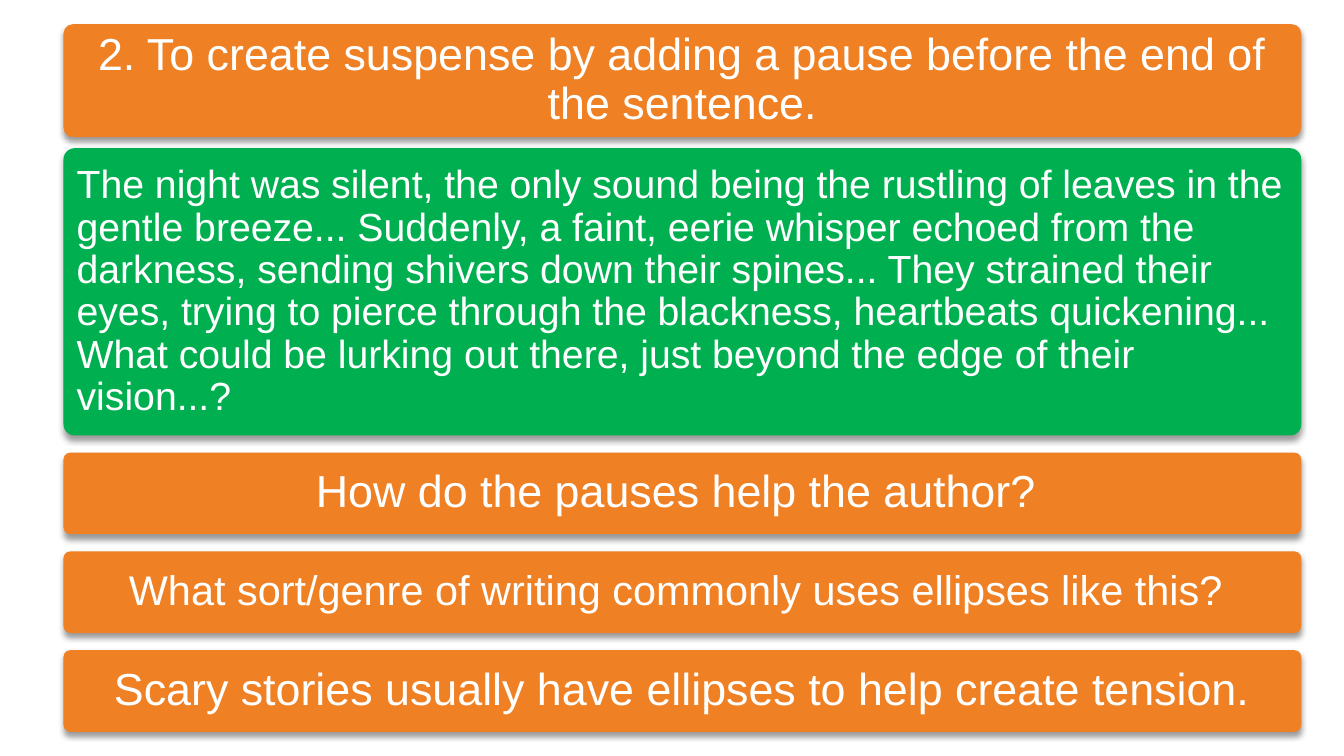
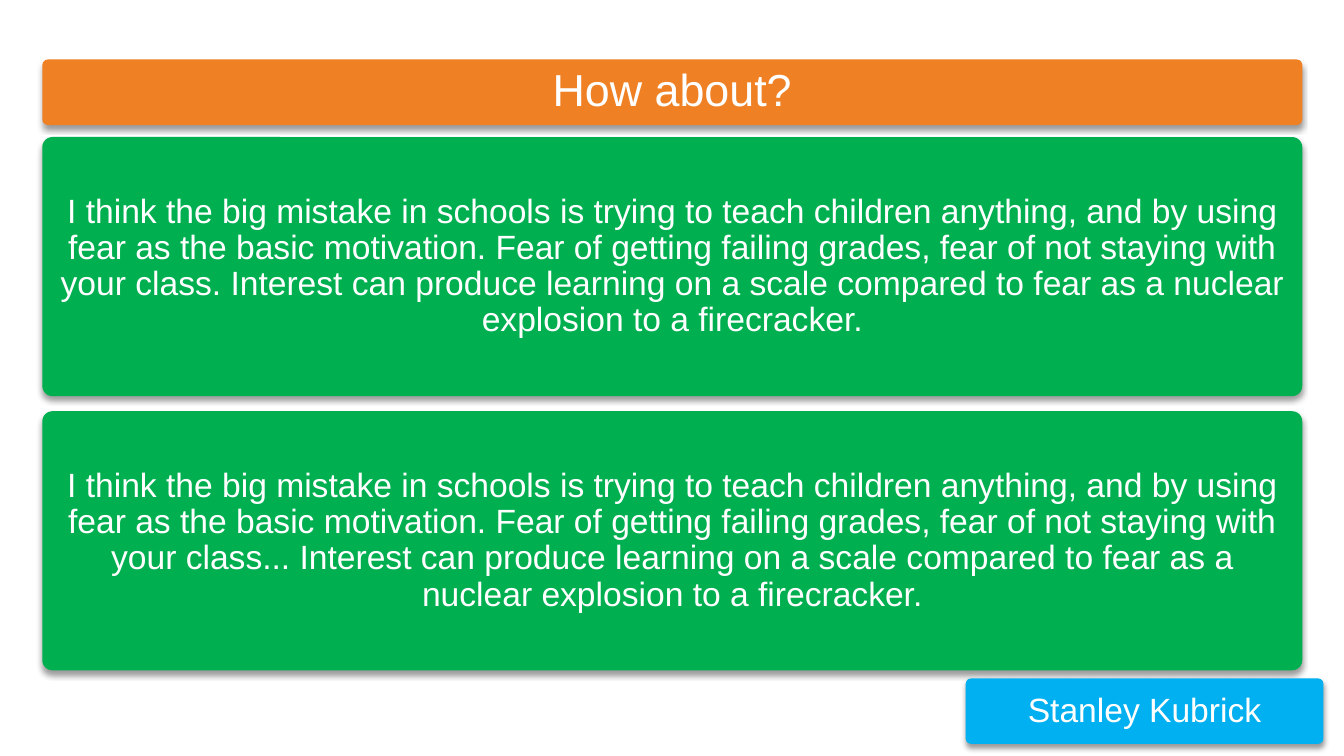
from lxml import etree
from pptx import Presentation
from pptx.dml.color import RGBColor
from pptx.enum.shapes import MSO_SHAPE as Shape
from pptx.enum.text import MSO_ANCHOR as Anchor, PP_ALIGN as Align
from pptx.oxml.ns import qn
from pptx.util import Pt

ORANGE = RGBColor(0xEF, 0x80, 0x23)
GREEN = RGBColor(0x00, 0xB0, 0x50)
BLUE = RGBColor(0x00, 0xB0, 0xF0)
WHITE = RGBColor(0xFF, 0xFF, 0xFF)
FONT = "Arial"

# Panel kinds: fill and corner rounding
KINDS = {"banner": (ORANGE, 0.084), "passage": (GREEN, 0.039), "credit": (BLUE, 0.084)}

QUOTE = (
    "I think the big mistake in schools is trying to teach children anything, "
    "and by using fear as the basic motivation. Fear of getting failing grades, "
    "fear of not staying with your class{} Interest can produce learning on a scale "
    "compared to fear as a nuclear explosion to a firecracker."
)
NIGHT = (
    "The night was silent, the only sound being the rustling of leaves in the gentle "
    "breeze... Suddenly, a faint, eerie whisper echoed from the darkness, sending "
    "shivers down their spines... They strained their eyes, trying to pierce through "
    "the blackness, heartbeats quickening... What could be lurking out there, just "
    "beyond the edge of their vision...?"
)

# Each slide is a stack of panels: kind, gap above, height, text size, text
SLIDES = [
    {"left": 45.36, "width": 884.16, "passage_align": Align.LEFT, "panels": [
        ("banner", 17.28, 80.64, 32,
         "2. To create suspense by adding a pause before the end of the sentence."),
        ("passage", 7.92, 205.2, 28, NIGHT),
        ("banner", 12.24, 58.32, 32, "How do the pauses help the author? "),
        ("banner", 12.24, 58.32, 29.6,
         "What sort/genre of writing commonly uses ellipses like this? "),
        ("banner", 12.24, 58.32, 32,
         "Scary stories usually have ellipses to help create tension."),
    ]},
    {"left": 30.24, "width": 900, "passage_align": Align.CENTER, "panels": [
        ("banner", 42.48, 46.8, 32, "How about?"),
        ("passage", 8.64, 185.04, 24, QUOTE.format(".")),
        ("passage", 10.8, 185.04, 24, QUOTE.format("...")),
        ("credit", 5.76, 46.8, 24, "Stanley Kubrick"),
    ]},
]
CREDIT_LEFT, CREDIT_WIDTH = 689.76, 255.6


def add_shadow(panel):
    """Soft black shadow straight below the panel."""
    panel.shadow.inherit = False
    effects = panel.fill._xPr.find(qn("a:effectLst"))
    outer = etree.SubElement(effects, qn("a:outerShdw"), blurRad=str(Pt(4)),
                             dist=str(Pt(3)), dir="5400000", rotWithShape="0")
    black = etree.SubElement(outer, qn("a:srgbClr"), val="000000")
    etree.SubElement(black, qn("a:alpha"), val="40000")


def add_panel(slide, kind, box, size, text, align):
    panel = slide.shapes.add_shape(Shape.ROUNDED_RECTANGLE, *map(Pt, box))
    color, rounding = KINDS[kind]
    panel.adjustments[0] = rounding
    panel.fill.solid()
    panel.fill.fore_color.rgb = color
    panel.line.fill.background()
    add_shadow(panel)

    frame = panel.text_frame
    frame.word_wrap = True
    frame.vertical_anchor = Anchor.MIDDLE
    frame.text = text
    paragraph = frame.paragraphs[0]
    paragraph.alignment = align
    paragraph.line_spacing = 0.9
    font = paragraph.runs[0].font
    font.name, font.size = FONT, Pt(size)
    font.color.rgb = WHITE


def add_stack(slide, content):
    bottom = 0
    for kind, gap, height, size, text in content["panels"]:
        top = bottom + gap
        left, width = content["left"], content["width"]
        if kind == "credit":
            left, width = CREDIT_LEFT, CREDIT_WIDTH
        align = content["passage_align"] if kind == "passage" else Align.CENTER
        add_panel(slide, kind, (left, top, width, height), size, text, align)
        bottom = top + height


def main():
    deck = Presentation()
    deck.slide_width, deck.slide_height = Pt(960), Pt(540)
    blank = deck.slide_layouts[6]
    for content in SLIDES:
        add_stack(deck.slides.add_slide(blank), content)
    deck.save("out.pptx")


if __name__ == "__main__":
    main()
